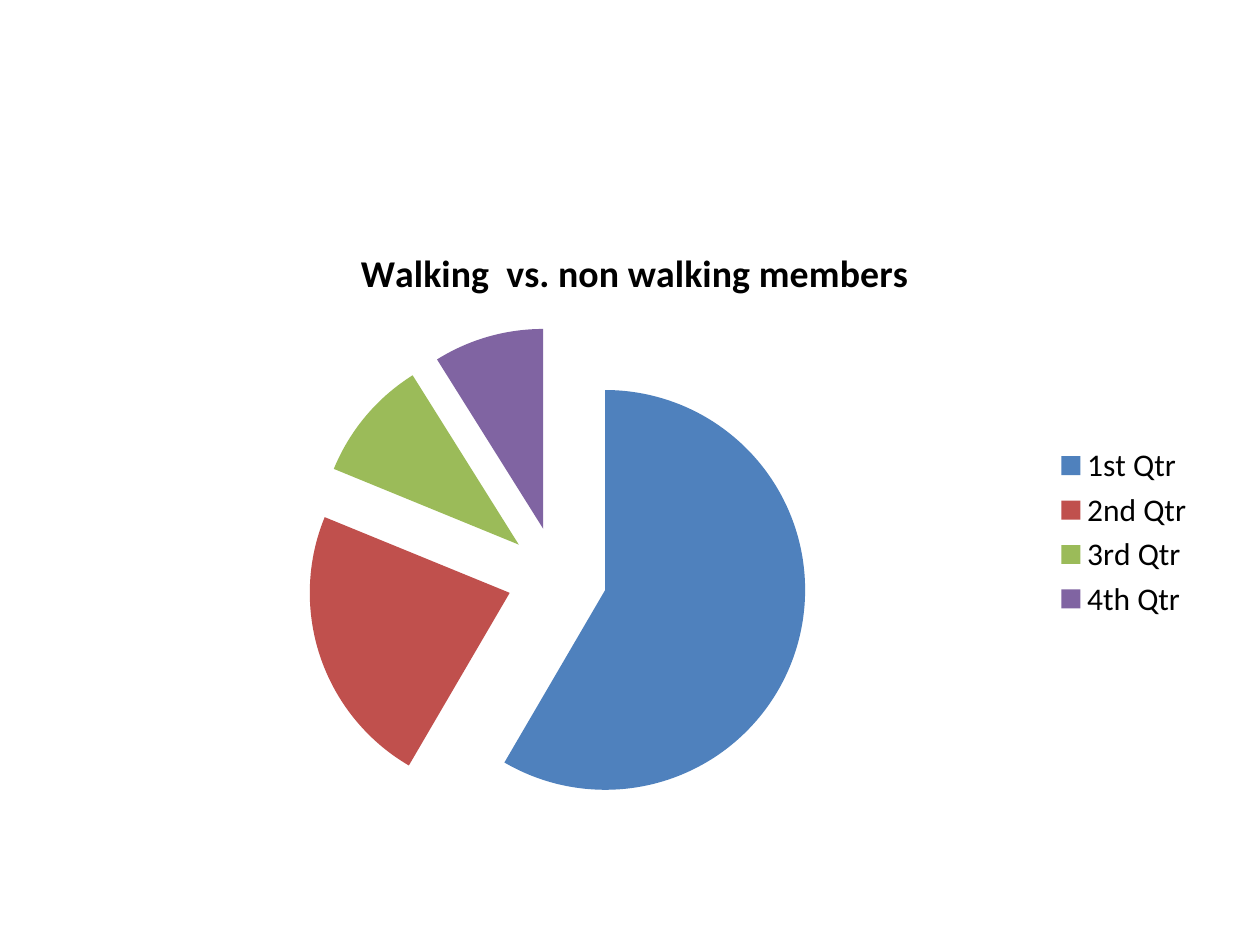
from dataclasses import dataclass

from lxml.etree import SubElement
from pptx import Presentation
from pptx.chart.data import CategoryChartData
from pptx.dml.color import RGBColor
from pptx.enum.chart import XL_CHART_TYPE, XL_LEGEND_POSITION
from pptx.oxml.ns import qn
from pptx.util import Inches, Pt


@dataclass(frozen=True)
class Theme:
    face: str = "Calibri"
    ink: str = "000000"
    slices: tuple = ("4F81BD", "C0504D", "9BBB59", "8064A2")
    body: float = 18
    title: float = 21.6


THEME = Theme()
QUARTERS = {"1st Qtr": 59, "2nd Qtr": 23, "3rd Qtr": 10, "4th Qtr": 9}


def style(font, size, bold=False):
    font.name = THEME.face
    font.size = Pt(size)
    font.bold = bold
    font.color.rgb = RGBColor.from_string(THEME.ink)


def explode(series, percent):
    node = series._element
    part = SubElement(node, qn("c:explosion"), val=str(percent))
    node.find(qn("c:tx")).addnext(part)


def add_pie(slide, box, title, values):
    data = CategoryChartData()
    data.categories = list(values)
    data.add_series("Series 1", list(values.values()))
    chart = slide.shapes.add_chart(XL_CHART_TYPE.PIE, *box, data).chart
    style(chart.font, THEME.body)

    chart.has_title = True
    run = chart.chart_title.text_frame.paragraphs[0].add_run()
    run.text = title
    style(run.font, THEME.title, bold=True)
    chart.chart_title.include_in_layout = False

    chart.has_legend = True
    chart.legend.position = XL_LEGEND_POSITION.RIGHT
    chart.legend.include_in_layout = False
    style(chart.legend.font, THEME.body)

    plot = chart.plots[0]
    plot.vary_by_categories = True
    series = plot.series[0]
    explode(series, 25)
    for index, color in enumerate(THEME.slices):
        fill = series.points[index].format.fill
        fill.solid()
        fill.fore_color.rgb = RGBColor.from_string(color)


def main():
    deck = Presentation()
    deck.slide_width = Inches(10)
    deck.slide_height = Inches(7.5)
    slide = deck.slides.add_slide(deck.slide_layouts[6])
    box = [Inches(side) for side in (0.5, 1.75, 9.08, 4.95)]
    add_pie(slide, box, "Walking  vs. non walking members", QUARTERS)
    deck.save("out.pptx")


if __name__ == "__main__":
    main()
